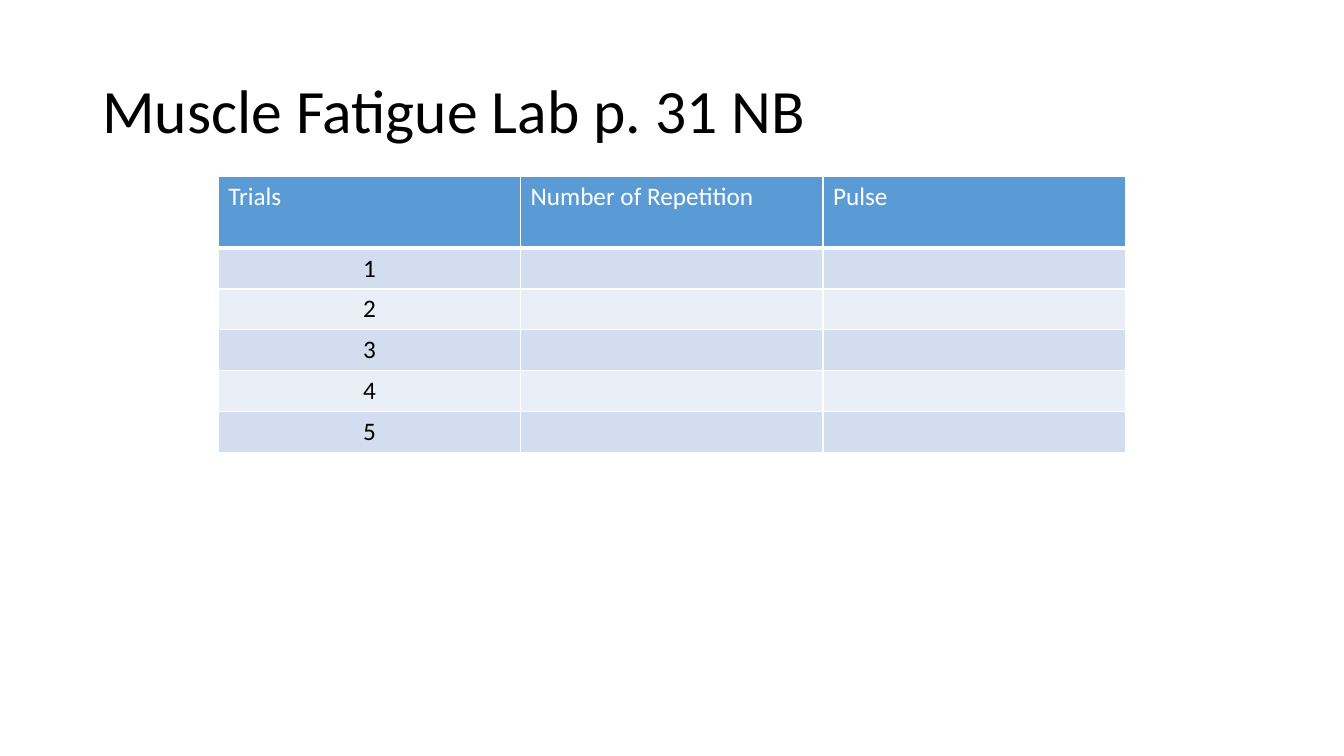
from dataclasses import dataclass

from lxml import etree
from pptx import Presentation
from pptx import util as u
from pptx.dml.color import RGBColor
from pptx.enum import text
from pptx.oxml import ns


@dataclass(frozen=True)
class Theme:
    font: str = "Calibri"
    title_size: int = 44
    table_size: int = 18
    ink: str = "000000"
    white: str = "FFFFFF"
    header: str = "5B9BD5"
    bands: tuple = ("D2DEEF", "EAEFF7")
    line: int = 1
    header_line: int = 3


class SlideBuilder:
    def __init__(self, page, theme):
        self.page = page
        self.theme = theme

    def style(self, para, size, color):
        for span in para.runs:
            span.font.name = self.theme.font
            span.font.size = u.Pt(size)
            span.font.bold = False
            span.font.color.rgb = RGBColor.from_string(color)

    def title(self, words, left, top, width, height):
        box = self.page.shapes.add_textbox(
            u.Cm(left), u.Cm(top), u.Cm(width), u.Cm(height))
        frame = box.text_frame
        frame.word_wrap = True
        frame.vertical_anchor = text.MSO_ANCHOR.MIDDLE
        frame.text = words
        para = frame.paragraphs[0]
        para.line_spacing = 0.9
        self.style(para, self.theme.title_size, self.theme.ink)

    def borders(self, cell, bottom):
        props = cell._tc.get_or_add_tcPr()
        widths = {"L": self.theme.line, "R": self.theme.line,
                  "T": self.theme.line, "B": bottom}
        for side, width in widths.items():
            line = etree.SubElement(props, ns.qn(f"a:ln{side}"), w=str(u.Pt(width)))
            fill = etree.SubElement(line, ns.qn("a:solidFill"))
            etree.SubElement(fill, ns.qn("a:srgbClr"), val=self.theme.white)

    def cell(self, cell, words, fill, color, align, bottom):
        self.borders(cell, bottom)
        cell.fill.solid()
        cell.fill.fore_color.rgb = RGBColor.from_string(fill)
        cell.text = words
        para = cell.text_frame.paragraphs[0]
        para.alignment = align
        para.font.size = u.Pt(self.theme.table_size)
        self.style(para, self.theme.table_size, color)

    def table(self, rows, left, top, width, header_height, row_height):
        theme = self.theme
        height = header_height + row_height * (len(rows) - 1)
        grid = self.page.shapes.add_table(
            len(rows), len(rows[0]),
            u.Cm(left), u.Cm(top), u.Cm(width), u.Cm(height)).table
        for r, row in enumerate(rows):
            is_header = r == 0
            grid.rows[r].height = u.Cm(header_height if is_header else row_height)
            for c, words in enumerate(row):
                if is_header:
                    look = (theme.header, theme.white,
                            text.PP_ALIGN.LEFT, theme.header_line)
                else:
                    look = (theme.bands[(r - 1) % 2], theme.ink,
                            text.PP_ALIGN.CENTER, theme.line)
                self.cell(grid.cell(r, c), words, *look)


def main():
    deck = Presentation()
    deck.slide_width = u.Cm(33.87)
    deck.slide_height = u.Cm(19.05)
    page = deck.slides.add_slide(deck.slide_layouts[6])
    builder = SlideBuilder(page, Theme())

    # Title
    builder.title("Muscle Fatigue Lab p. 31 NB", 2.33, 1.01, 29.21, 3.68)

    # Record sheet: one empty row per trial
    trials = [[str(number), "", ""] for number in range(1, 6)]
    builder.table([["Trials", "Number of Repetition", "Pulse"], *trials],
                  left=5.5, top=4.45, width=22.86,
                  header_height=1.8, row_height=1.03)

    deck.save("out.pptx")


if __name__ == "__main__":
    main()
